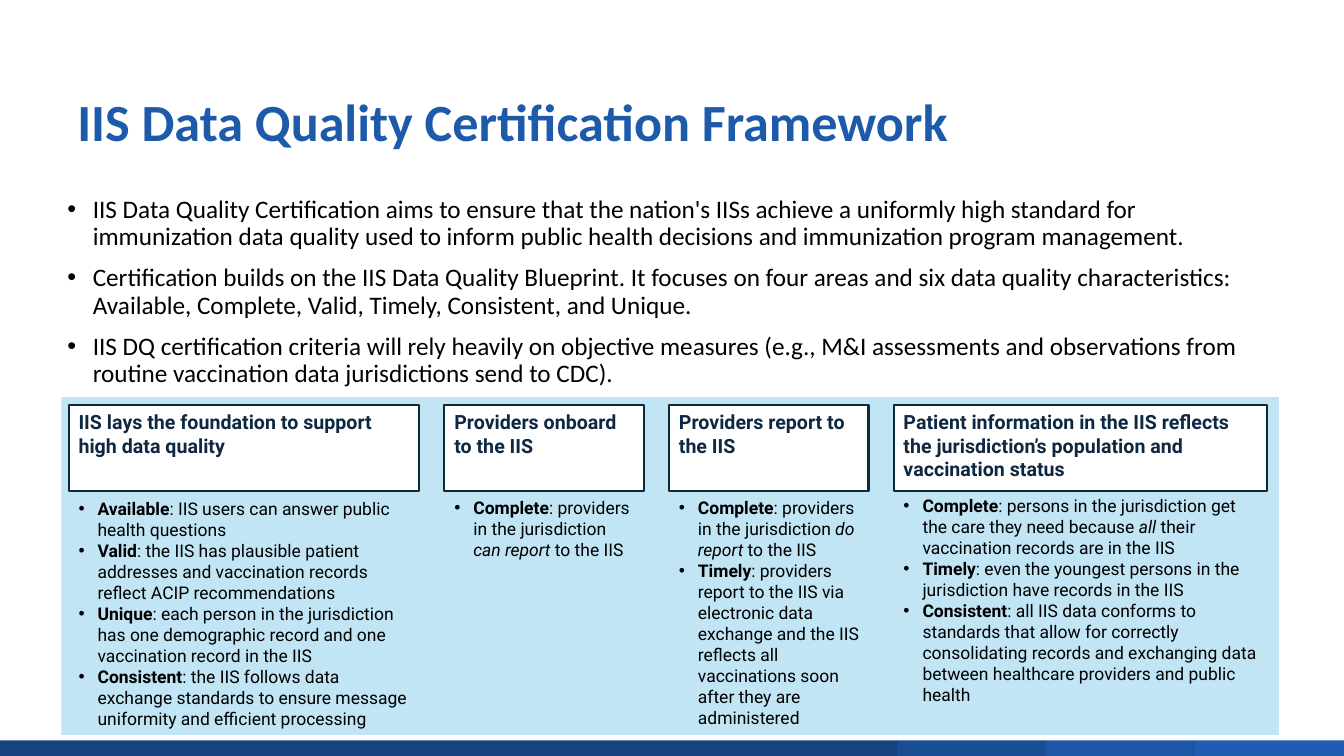
from pptx import Presentation
from pptx.dml.color import RGBColor
from pptx.enum.shapes import MSO_SHAPE
from pptx.enum.text import MSO_ANCHOR, MSO_AUTO_SIZE, PP_ALIGN
from pptx.oxml.ns import qn
from pptx.util import Cm, Pt
from lxml import etree

RECT = MSO_SHAPE.RECTANGLE
TOP, BOTTOM = MSO_ANCHOR.TOP, MSO_ANCHOR.BOTTOM
LEFT = PP_ALIGN.LEFT
GROW = MSO_AUTO_SIZE.SHAPE_TO_FIT_TEXT

TITLE = "IIS Data Quality Certification Framework"
POINTS = [
    "IIS Data Quality Certification aims to ensure that the nation's IISs achieve a uniformly high "
    "standard for immunization data quality used to inform public health decisions and immunization "
    "program management.",
    "Certification builds on the IIS Data Quality Blueprint. It focuses on four areas and six data "
    "quality characteristics: Available, Complete, Valid, Timely, Consistent, and Unique.",
    "IIS DQ certification criteria will rely heavily on objective measures (e.g., M&I assessments and "
    "observations from routine vaccination data jurisdictions send to CDC).",
]
AREAS = [
    {"heading": "IIS lays the foundation to support high data quality",
     "width": 8.84, "list": (12.42, 8.86, 4.52),
     "items": [
         ("Available", ": IIS users can answer public health questions"),
         ("Valid", ": the IIS has plausible patient addresses and vaccination records reflect "
                   "ACIP recommendations"),
         ("Unique", ": each person in the jurisdiction has one demographic record and one "
                    "vaccination record in the IIS"),
         ("Consistent", ": the IIS follows data exchange standards to ensure message uniformity "
                        "and efficient processing")]},
    {"heading": "Providers onboard to the IIS",
     "width": 5.03, "list": (12.4, 5.03, 1.85),
     "items": [
         ("Complete", ": providers in the jurisdiction ", "can report ", "to the IIS")]},
    {"heading": "Providers report to the IIS",
     "width": 5.03, "list": (12.4, 5.05, 4.52),
     "items": [
         ("Complete", ": providers in the jurisdiction ", "do report ", "to the IIS"),
         ("Timely", ": providers report to the IIS via electronic data exchange and the IIS "
                    "reflects all vaccinations soon after they are administered")]},
    {"heading": "Patient information in the IIS reflects the jurisdiction’s population and "
                "vaccination status",
     "width": 9.42, "list": (12.34, 9.5, 3.99),
     "items": [
         ("Complete", ": persons in the jurisdiction get the care they need because ", "all",
          " their vaccination records are in the IIS"),
         ("Timely", ": even the youngest persons in the jurisdiction have records in the IIS"),
         ("Consistent", ": all IIS data conforms to standards that allow for correctly "
                        "consolidating records and exchanging data between healthcare providers "
                        "and public health")]},
]
ITEM_STYLES = [{"bold": True}, {}, {"italic": True}, {}]
FOOTER = [(0, 22.62, "164380"), (22.61, 3.76, "194D93"),
          (26.36, 3.76, "1C56A4"), (30.11, 3.76, "1E5DB2")]
COLUMN_LEFT, COLUMN_GAP = 1.73, 0.63


def rgb(value):
    return RGBColor.from_string(value)


def assign(target, values):
    for name, value in values.items():
        setattr(target, name, value)


class SlideBuilder:
    TITLE = {"name": "Calibri", "size": Pt(37.3), "bold": True, "color": "1E5AAA"}
    BODY = {"name": "Calibri", "size": Pt(18), "color": "000000"}
    HEADING = {"name": "Roboto", "size": Pt(14), "bold": True, "color": "0E2841"}
    ITEM = {"name": "Roboto", "size": Pt(12.5), "color": "000000"}

    def __init__(self, slide):
        self.slide = slide

    def rect(self, box, fill, line=None):
        sp = self.slide.shapes.add_shape(RECT, *map(Cm, box))
        sp.shadow.inherit = False
        sp.fill.solid()
        sp.fill.fore_color.rgb = rgb(fill)
        if line:
            sp.line.color.rgb = rgb(line)
            sp.line.width = Pt(1.5)
        else:
            sp.line.fill.background()
        return sp

    def textbox(self, box, paragraphs, style, **options):
        sp = self.slide.shapes.add_textbox(*map(Cm, box))
        self.fill_text(sp, paragraphs, style, **options)

    def heading(self, box, text):
        sp = self.rect(box, "FFFFFF", "092A39")
        self.fill_text(sp, [[(text, {})]], self.HEADING)

    def fill_text(self, sp, paragraphs, style, indent=0, anchor=TOP, grow=False, gap=0, spacing=1.0):
        tf = sp.text_frame
        assign(tf, {"word_wrap": True, "vertical_anchor": anchor})
        if grow:
            tf.auto_size = GROW
        for i, runs in enumerate(paragraphs):
            p = tf.paragraphs[0] if i == 0 else tf.add_paragraph()
            if indent:
                self.bullet(p, indent)
            assign(p, {"alignment": LEFT, "line_spacing": spacing,
                       "space_before": Pt(gap if i else 0)})
            for text, extra in runs:
                r = p.add_run()
                r.text = text
                font = {**style, **extra}
                r.font.color.rgb = rgb(font.pop("color"))
                assign(r.font, font)

    def bullet(self, p, indent):
        pPr = p._p.get_or_add_pPr()
        pPr.set("marL", str(Cm(indent)))
        pPr.set("indent", str(-Cm(indent)))
        etree.SubElement(pPr, qn("a:buFont")).set("typeface", "Arial")
        etree.SubElement(pPr, qn("a:buChar")).set("char", "•")


def main():
    prs = Presentation()
    assign(prs, {"slide_width": Cm(33.87), "slide_height": Cm(19.05)})
    s = SlideBuilder(prs.slides.add_slide(prs.slide_layouts[6]))

    for left, width, color in FOOTER:
        s.rect((left, 18.66, width, 0.39), color)

    s.textbox((1.7, 0.76, 30.48, 3.18), [[(TITLE, {})]], s.TITLE, anchor=BOTTOM, spacing=0.76)
    s.textbox((1.45, 4.83, 30.2, 12.09), [[(point, {})] for point in POINTS], s.BODY,
              indent=0.64, gap=10, spacing=0.9)

    s.rect((1.55, 10.01, 30.68, 8.51), "C1E5F5")
    left = COLUMN_LEFT
    for area in AREAS:
        s.heading((left, 10.21, area["width"], 2.16), area["heading"])
        items = [list(zip(item, ITEM_STYLES)) for item in area["items"]]
        s.textbox((left, *area["list"]), items, s.ITEM, indent=0.48, grow=True)
        left += area["width"] + COLUMN_GAP

    prs.save("out.pptx")


if __name__ == "__main__":
    main()
